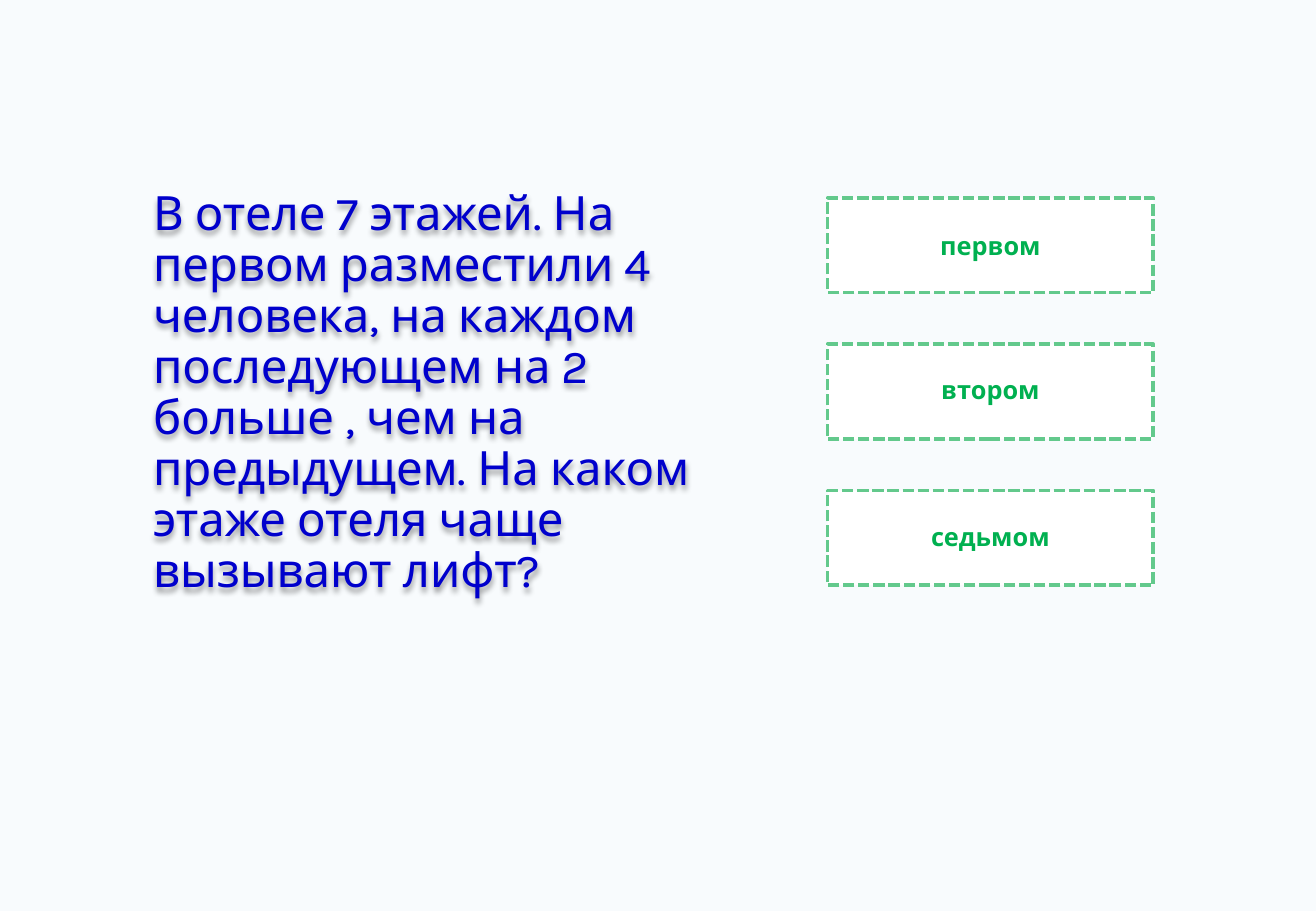
"""Build a quiz slide with one question and three answer boxes."""
from pptx import Presentation
from pptx.dml.color import RGBColor
from pptx.enum.dml import MSO_LINE
from pptx.enum.shapes import MSO_SHAPE
from pptx.enum.text import MSO_ANCHOR, PP_ALIGN
from pptx.oxml import parse_xml
from pptx.oxml.ns import nsdecls
from pptx.util import Cm, Pt

RECT = MSO_SHAPE.RECTANGLE
DASH = MSO_LINE.SQUARE_DOT
MIDDLE = MSO_ANCHOR.MIDDLE
LEFT, CENTER = PP_ALIGN.LEFT, PP_ALIGN.CENTER

PALE = RGBColor(0xF8, 0xFB, 0xFD)
WHITE = RGBColor(0xFF, 0xFF, 0xFF)
BLUE = RGBColor(0x00, 0x00, 0xCC)
GREEN = RGBColor(0x00, 0xB0, 0x50)
MINT = RGBColor(0x63, 0xC9, 0x8C)

QUESTION = (
    "В отеле 7 этажей. На первом разместили 4 человека, "
    "на каждом последующем на 2 больше , чем на предыдущем. "
    "На каком этаже отеля чаще вызывают лифт?"
)
ANSWERS = [("первом", 1.0), ("втором", 0.9), ("седьмом", 0.9)]
TOP, STEP = 4.14, 3.06

SHADE = (
    f'<a:effectLst {nsdecls("a")}>'
    '<a:outerShdw blurRad="38100" dist="38100" dir="5400000" algn="t" rotWithShape="0">'
    '<a:srgbClr val="000000"><a:alpha val="40000"/></a:srgbClr>'
    "</a:outerShdw></a:effectLst>"
)


class Quiz:
    """Hold the text style and the current slide."""

    ask = {"name": "Karla", "size": Pt(28), "bold": False}
    reply = {"name": "Karla", "size": Pt(15), "bold": True}

    def __init__(self, slide):
        """Keep the slide and paint its background."""
        self.slide = slide
        fill = slide.background.fill
        fill.solid()
        fill.fore_color.rgb = PALE

    def label(self, shape, text, style, color, align, space):
        """Put one styled paragraph in a shape."""
        frame = shape.text_frame
        frame.word_wrap = True
        frame.vertical_anchor = MIDDLE
        para = frame.paragraphs[0]
        para.alignment = align
        para.line_spacing = space
        run = para.add_run()
        run.text = text
        for key, value in style.items():
            setattr(run.font, key, value)
        run.font.color.rgb = color

    def title(self, text, *place):
        """Add the question with a soft shadow."""
        box = self.slide.shapes.add_textbox(*map(Cm, place))
        box.element.spPr.append(parse_xml(SHADE))
        self.label(box, text, self.ask, BLUE, LEFT, 0.9)

    def answer(self, text, space, *place):
        """Add a dashed answer box."""
        box = self.slide.shapes.add_shape(RECT, *map(Cm, place))
        box.shadow.inherit = False
        box.fill.solid()
        box.fill.fore_color.rgb = WHITE
        box.line.color.rgb = MINT
        box.line.width = Pt(2.25)
        box.line.dash_style = DASH
        self.label(box, text, self.reply, GREEN, CENTER, space)


def main():
    """Build and save the slide."""
    deck = Presentation()
    deck.slide_width, deck.slide_height = Cm(27.51), Cm(19.05)
    quiz = Quiz(deck.slides.add_slide(deck.slide_layouts[6]))
    quiz.title(QUESTION, 2.95, 1.73, 12.55, 13)
    for row, (text, space) in enumerate(ANSWERS):
        quiz.answer(text, space, 17.3, TOP + row * STEP, 6.81, 1.98)
    deck.save("out.pptx")


if __name__ == "__main__":
    main()
